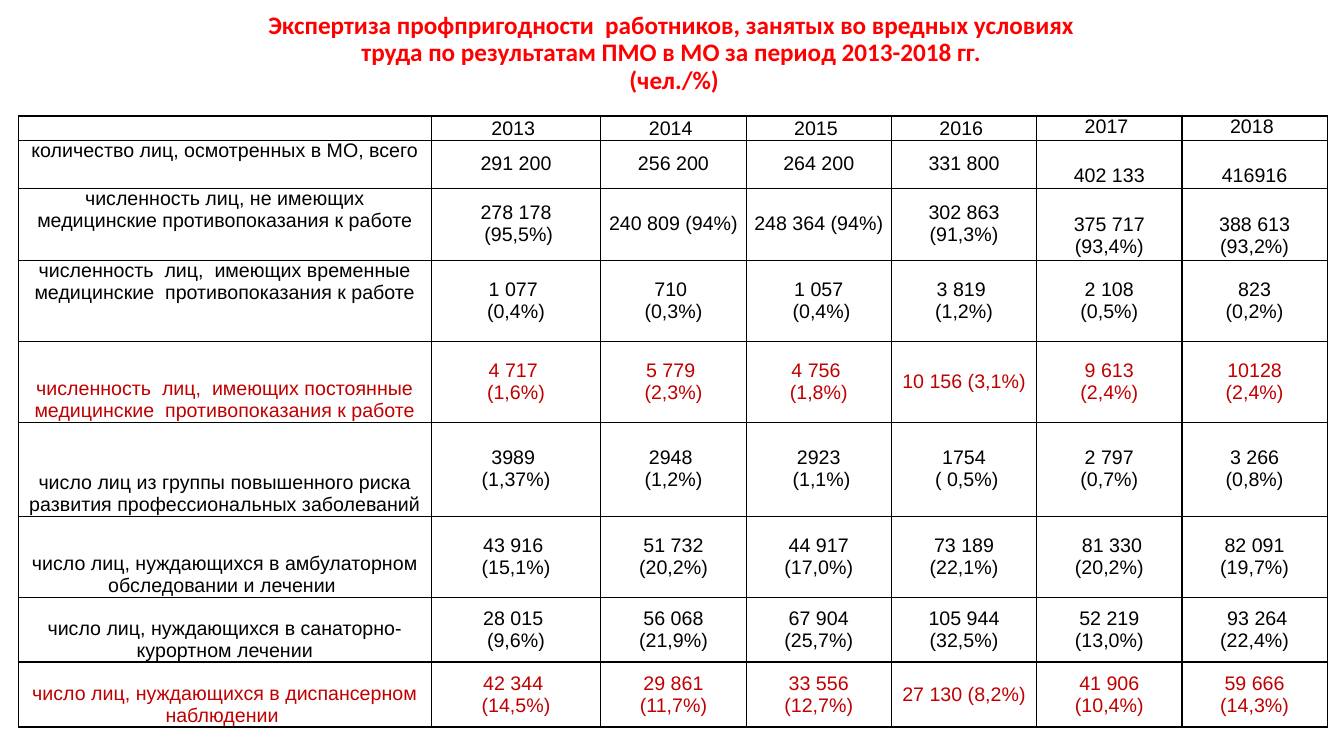
"""Build a slide with a table of occupational fitness results for 2013-2018."""
from dataclasses import dataclass

from lxml import etree
from pptx import Presentation
from pptx.dml.color import RGBColor
from pptx.enum.text import MSO_ANCHOR, PP_ALIGN
from pptx.oxml.ns import qn
from pptx.util import Pt

TOP, MIDDLE, BOTTOM = MSO_ANCHOR.TOP, MSO_ANCHOR.MIDDLE, MSO_ANCHOR.BOTTOM
CENTER = PP_ALIGN.CENTER


@dataclass(frozen=True)
class Theme:
    title: RGBColor = RGBColor(0xFF, 0x00, 0x00)
    accent: RGBColor = RGBColor(0xC0, 0x00, 0x00)
    ink: RGBColor = RGBColor(0x00, 0x00, 0x00)
    title_font: str = "Calibri"
    table_font: str = "Arial"
    title_size: int = 18
    table_size: int = 14
    border: int = 1


def apply(target, values):
    for name, value in values.items():
        setattr(target, name, value)


def add_borders(cell, color, width):
    properties = cell._tc.get_or_add_tcPr()
    for position, side in enumerate(("a:lnL", "a:lnR", "a:lnT", "a:lnB")):
        line = etree.Element(qn(side), w=str(Pt(width)))
        fill = etree.SubElement(line, qn("a:solidFill"))
        etree.SubElement(fill, qn("a:srgbClr"), val=str(color))
        properties.insert(position, line)


theme = Theme()
title_text = (
    "Экспертиза профпригодности  работников, занятых во вредных условиях "
    "труда по результатам ПМО в МО за период 2013-2018 гг.\v (чел./%)"
)
column_widths = [294.8, 121.2] + [103.8] * 5
row_heights = [17.2, 34.3, 51.4, 57.9, 57.9, 67.1, 57.9, 46.4, 46.4]
rows = [
    ["", "2013 ", "2014 ", "2015 ", "2016 ", "2017 ", "2018 "],
    ["количество лиц, осмотренных в МО, всего",
     "291 200", "256 200", "264 200", "331 800", "402 133", "416916"],
    ["численность лиц, не имеющих медицинские противопоказания к работе",
     "278 178\n (95,5%)", "240 809 (94%)", "248 364 (94%)",
     "302 863 (91,3%)", "375 717\n(93,4%)", "388 613\n(93,2%)"],
    ["численность  лиц,  имеющих временные медицинские  противопоказания к работе",
     "1 077 \n(0,4%)", "710 \n(0,3%)", "1 057\n (0,4%)",
     "3 819 \n(1,2%)", "2 108\n(0,5%)", "823\n(0,2%)"],
    ["численность  лиц,  имеющих постоянные медицинские  противопоказания к работе",
     "4 717 \n(1,6%)", "5 779 \n(2,3%)", "4 756 \n(1,8%)",
     "10 156 (3,1%)", "9 613\n(2,4%)", "10128\n(2,4%)"],
    ["число лиц из группы повышенного риска развития профессиональных заболеваний",
     "3989 \n(1,37%)", "2948 \n(1,2%)", "2923\n (1,1%)",
     "1754\n ( 0,5%)", "2 797\n(0,7%)", "3 266\n(0,8%)"],
    ["число лиц, нуждающихся в амбулаторном обследовании и лечении ",
     "43 916 \n(15,1%)", "51 732 (20,2%)", "44 917 (17,0%)",
     "73 189 (22,1%)", " 81 330\n(20,2%)", "82 091\n(19,7%)"],
    ["число лиц, нуждающихся в санаторно-курортном лечении",
     "28 015 \n(9,6%)", "56 068 (21,9%)", "67 904 (25,7%)",
     "105 944 (32,5%)", "52 219\n(13,0%)", " 93 264\n(22,4%)"],
    ["число лиц, нуждающихся в диспансерном наблюдении ",
     "42 344 \n(14,5%)", "29 861 (11,7%)", "33 556 (12,7%)",
     "27 130 (8,2%)", "41 906\n(10,4%)", "59 666\n(14,3%)"],
]
accent_rows = (4, 8)
lowered_rows = (1, 2)
first_late_column = 5

deck = Presentation()
apply(deck, {"slide_width": Pt(960), "slide_height": Pt(540)})
page = deck.slides.add_slide(deck.slide_layouts[6])

title_frame = page.shapes.add_textbox(Pt(169.2), Pt(20.9), Pt(620.6), Pt(54.7)).text_frame
apply(title_frame, {"word_wrap": True, "vertical_anchor": MIDDLE, "margin_bottom": Pt(23.4)})
title_frame.text = title_text
title_para = title_frame.paragraphs[0]
apply(title_para, {"alignment": CENTER, "line_spacing": 0.9})
for span in title_para.runs:
    apply(span.font, {"name": theme.title_font, "size": Pt(theme.title_size), "bold": True})
    span.font.color.rgb = theme.title

table = page.shapes.add_table(
    len(rows), len(column_widths), Pt(13.2), Pt(82.9),
    Pt(sum(column_widths)), Pt(sum(row_heights)),
).table
apply(table, {"first_row": False, "horz_banding": False})
for column, width in zip(table.columns, column_widths):
    column.width = Pt(width)

for row_index, values in enumerate(rows):
    table.rows[row_index].height = Pt(row_heights[row_index])
    color = theme.accent if row_index in accent_rows else theme.ink
    for column_index, value in enumerate(values):
        late = column_index >= first_late_column
        if row_index == 0:
            anchor = TOP if late else BOTTOM
        elif column_index == 0:
            anchor = TOP if row_index < accent_rows[0] else BOTTOM
        else:
            anchor = MIDDLE
        cell = table.cell(row_index, column_index)
        apply(cell, {
            "text": value,
            "vertical_anchor": anchor,
            "margin_left": Pt(5),
            "margin_right": Pt(5),
            "margin_top": Pt(16 if late and row_index in lowered_rows else 0),
            "margin_bottom": Pt(0),
        })
        cell.fill.background()
        add_borders(cell, theme.ink, theme.border)
        for para in cell.text_frame.paragraphs:
            para.alignment = CENTER
            etree.SubElement(para._p, qn("a:endParaRPr"), sz=str(theme.table_size * 100))
            for span in para.runs:
                apply(span.font, {"name": theme.table_font, "size": Pt(theme.table_size), "bold": False})
                span.font.color.rgb = color

deck.save("out.pptx")
